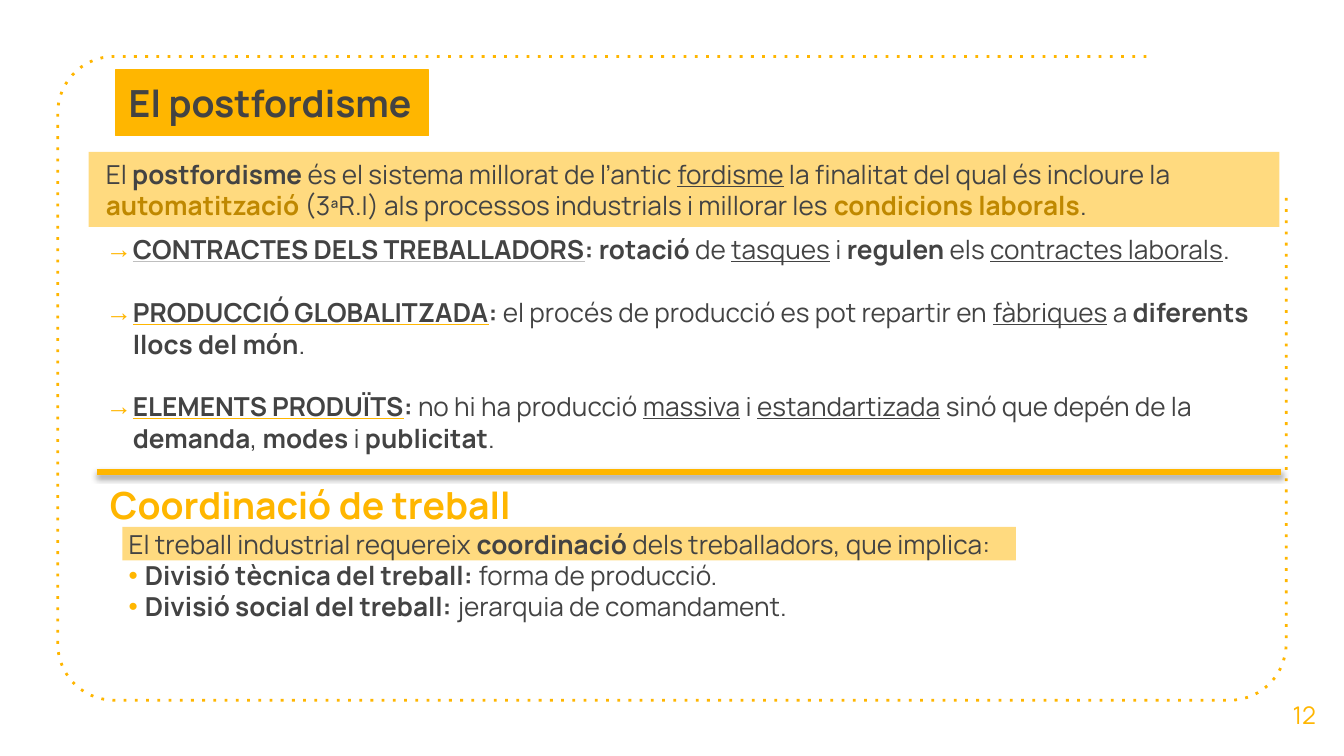
import math

from lxml import etree
from pptx import Presentation
from pptx.dml.color import RGBColor
from pptx.enum.dml import MSO_LINE
from pptx.enum.shapes import MSO_CONNECTOR, MSO_SHAPE
from pptx.enum.text import MSO_ANCHOR, MSO_AUTO_SIZE, PP_ALIGN
from pptx.oxml.ns import qn
from pptx.util import Inches, Pt

RECTANGLE = MSO_SHAPE.RECTANGLE
STRAIGHT = MSO_CONNECTOR.STRAIGHT
DOTTED = MSO_LINE.ROUND_DOT
TOP, MIDDLE = MSO_ANCHOR.TOP, MSO_ANCHOR.MIDDLE
GROW, FIXED = MSO_AUTO_SIZE.SHAPE_TO_FIT_TEXT, MSO_AUTO_SIZE.NONE
LEFT, CENTER = PP_ALIGN.LEFT, PP_ALIGN.CENTER

FONT, BULLET_FONT = "Manrope", "Arial"
YELLOW, DARK, OCHRE, GREY = "FFB600", "434343", "BF8800", "BFBFBF"

# Run styles: font attributes, text colour and underline colour
PLAIN = {}
BOLD = {"bold": True}
UNDER = {"underline": True}
ACCENT = {"bold": True, "color": OCHRE}
TITLE = {"bold": True, "size": Pt(20)}
SECTION = {**TITLE, "color": YELLOW}
NUMBER = {"size": Pt(13), "color": YELLOW}
HEADING = {"bold": True, "underline": True, "underline_color": YELLOW}
GREY_HEADING = {**HEADING, "underline_color": GREY}

DEFINITION = [[
    ("El ", PLAIN), ("postfordisme", BOLD),
    (" és el sistema millorat de l’antic ", PLAIN), ("fordisme", UNDER),
    (" la finalitat del qual és incloure la ", PLAIN), ("automatització", ACCENT),
    (" (3ªR.I) als processos industrials i millorar les ", PLAIN),
    ("condicions laborals", ACCENT), (".", PLAIN),
]]
FEATURES = [
    [("CONTRACTES DELS TREBALLADORS", GREY_HEADING), (": rotació", BOLD), (" de ", PLAIN),
     ("tasques", UNDER), (" i ", PLAIN), ("regulen", BOLD), (" els ", PLAIN),
     ("contractes laborals", UNDER), (".", PLAIN)],
    [("PRODUCCIÓ GLOBALITZADA", HEADING), (": ", BOLD),
     ("el procés de producció es pot repartir en ", PLAIN), ("fàbriques", UNDER),
     (" a ", PLAIN), ("diferents llocs del món", BOLD), (".", PLAIN)],
    [("ELEMENTS PRODUÏTS", HEADING), (":", BOLD), (" no hi ha producció ", PLAIN),
     ("massiva", UNDER), (" i ", PLAIN), ("estandartizada", UNDER),
     (" sinó que depén de la ", PLAIN), ("demanda", BOLD), (", ", PLAIN),
     ("modes", BOLD), (" i ", PLAIN), ("publicitat", BOLD), (".", PLAIN)],
]
COORDINATION = [[("El treball industrial requereix ", PLAIN), ("coordinació", BOLD),
                 (" dels treballadors, que implica:", PLAIN)]]
DIVISIONS = [
    [("Divisió tècnica del treball:", BOLD), (" forma de producció.", PLAIN)],
    [("Divisió social del treball:", BOLD), (" jerarquia de comandament.", PLAIN)],
]


def rgb(value):
    return RGBColor.from_string(value)


def add_color(parent, value, alpha=None):
    color = etree.SubElement(parent, qn("a:srgbClr"), val=value)
    if alpha is not None:
        etree.SubElement(color, qn("a:alpha"), val=str(alpha * 1000))


def add_run(paragraph, text, style):
    run = paragraph.add_run()
    run.text = text
    values = {"size": Pt(14), "name": FONT, **style}
    underline_color = values.pop("underline_color", None)
    run.font.color.rgb = rgb(values.pop("color", DARK))
    for name, value in values.items():
        setattr(run.font, name, value)
    if underline_color:
        underline = etree.Element(qn("a:uFill"))
        add_color(etree.SubElement(underline, qn("a:solidFill")), underline_color)
        run.font._element.find(qn("a:latin")).addprevious(underline)


def add_bullet(paragraph, character, indent):
    properties = paragraph._p.get_or_add_pPr()
    properties.set("marL", str(Inches(indent)))
    properties.set("indent", str(-Inches(indent)))
    add_color(etree.SubElement(properties, qn("a:buClr")), YELLOW)
    etree.SubElement(properties, qn("a:buFont"), typeface=BULLET_FONT)
    etree.SubElement(properties, qn("a:buChar"), char=character)


def write(frame, paragraphs, bullet=None, indent=0, gap=0, align=LEFT, append=False):
    for index, runs in enumerate(paragraphs):
        new = append or index > 0
        paragraph = frame.add_paragraph() if new else frame.paragraphs[0]
        paragraph.alignment = align
        if index:
            paragraph.space_before = Pt(gap)
        if bullet:
            add_bullet(paragraph, bullet, indent)
        for text, style in runs:
            add_run(paragraph, text, style)


def add_text(slide, box, paragraphs, anchor=TOP, wrap=True, **layout):
    frame = slide.shapes.add_textbox(*map(Inches, box)).text_frame
    frame.word_wrap = wrap
    frame.auto_size = GROW if anchor == TOP else FIXED
    frame.vertical_anchor = anchor
    write(frame, paragraphs, **layout)
    return frame


def add_band(slide, box, alpha=None):
    band = slide.shapes.add_shape(RECTANGLE, *map(Inches, box))
    band.shadow.inherit = False
    band.fill.solid()
    band.fill.fore_color.rgb = rgb(YELLOW)
    band.line.fill.background()
    if alpha:
        color = band._element.spPr.find(".//" + qn("a:srgbClr"))
        etree.SubElement(color, qn("a:alpha"), val=str(alpha * 1000))
    return band


def add_frame(slide, box, radius=0.42, steps=15):
    """Dotted outline, open at the top right, with three round corners."""
    left, top, width, height = box
    right, bottom = left + width, top + height
    centres = [(left + radius, top + radius, 270),
               (left + radius, bottom - radius, 180),
               (right - radius, bottom - radius, 90)]
    points = [(right - 1.04, top)]
    for x, y, start in centres:
        for step in range(steps + 1):
            angle = math.radians(start - 90 * step / steps)
            points.append((x + radius * math.cos(angle), y + radius * math.sin(angle)))
    points.append((right, top + 1.04))
    points = [(Inches(x), Inches(y)) for x, y in points]
    builder = slide.shapes.build_freeform(*points[0])
    builder.add_line_segments(points[1:], close=False)
    outline = builder.convert_to_shape()
    outline.shadow.inherit = False
    outline.fill.background()
    outline.line.color.rgb = rgb(YELLOW)
    outline.line.width = Pt(1.5)
    outline.line.dash_style = DOTTED
    # Widely spaced dots have no enum member
    outline._element.spPr.find(".//" + qn("a:prstDash")).set("val", "dot")


def add_divider(slide, left, top, width):
    ends = left, top, left + width, top
    divider = slide.shapes.add_connector(STRAIGHT, *map(Inches, ends))
    divider.line.color.rgb = rgb(YELLOW)
    divider.line.width = Pt(3)
    effects = etree.SubElement(divider._element.spPr, qn("a:effectLst"))
    shadow = etree.SubElement(effects, qn("a:outerShdw"), blurRad=str(Pt(3.1)),
                              dist=str(Pt(1.8)), dir="5400000", rotWithShape="0")
    add_color(shadow, "000000", 35)


def add_postfordism(slide, left, top, width):
    # Title label
    title = add_band(slide, (left + 0.2, top, 2.33, 0.49))
    title.line.color.rgb = rgb(YELLOW)
    title.line.width = Pt(0.75)
    title.text_frame.vertical_anchor = MIDDLE
    write(title.text_frame, [[("El postfordisme", TITLE)]])
    # Highlighted definition and its features
    add_band(slide, (left, top + 0.61, width, 0.56), alpha=50)
    add_text(slide, (left + 0.03, top + 0.61, width - 0.03, 0.57), DEFINITION)
    add_text(slide, (left + 0.03, top + 1.17, width - 0.03, 1.75), FEATURES,
             bullet="→", indent=0.2, gap=16.8)


def add_coordination(slide, left, top, width):
    add_band(slide, (left + 0.19, top + 0.41, 6.65, 0.25), alpha=50)
    add_divider(slide, left, top, width)
    add_text(slide, (left, top, 3.63, 0.49), [[("Coordinació de treball", SECTION)]],
             anchor=MIDDLE)
    frame = add_text(slide, (left + 0.14, top + 0.37, 6.73, 0.81), COORDINATION, wrap=False)
    write(frame, DIVISIONS, bullet="•", indent=0.12, append=True)


def main():
    presentation = Presentation()
    presentation.slide_width = Inches(10)
    presentation.slide_height = presentation.slide_width * 9 // 16
    slide = presentation.slides.add_slide(presentation.slide_layouts[6])
    add_frame(slide, (0.43, 0.42, 9.14, 4.79))
    add_text(slide, (9.41, 5.02, 0.59, 0.6), [[("12", NUMBER)]], anchor=MIDDLE, align=CENTER)
    add_postfordism(slide, 0.66, 0.52, 8.86)
    add_coordination(slide, 0.72, 3.51, 8.81)
    presentation.save("out.pptx")


if __name__ == "__main__":
    main()
